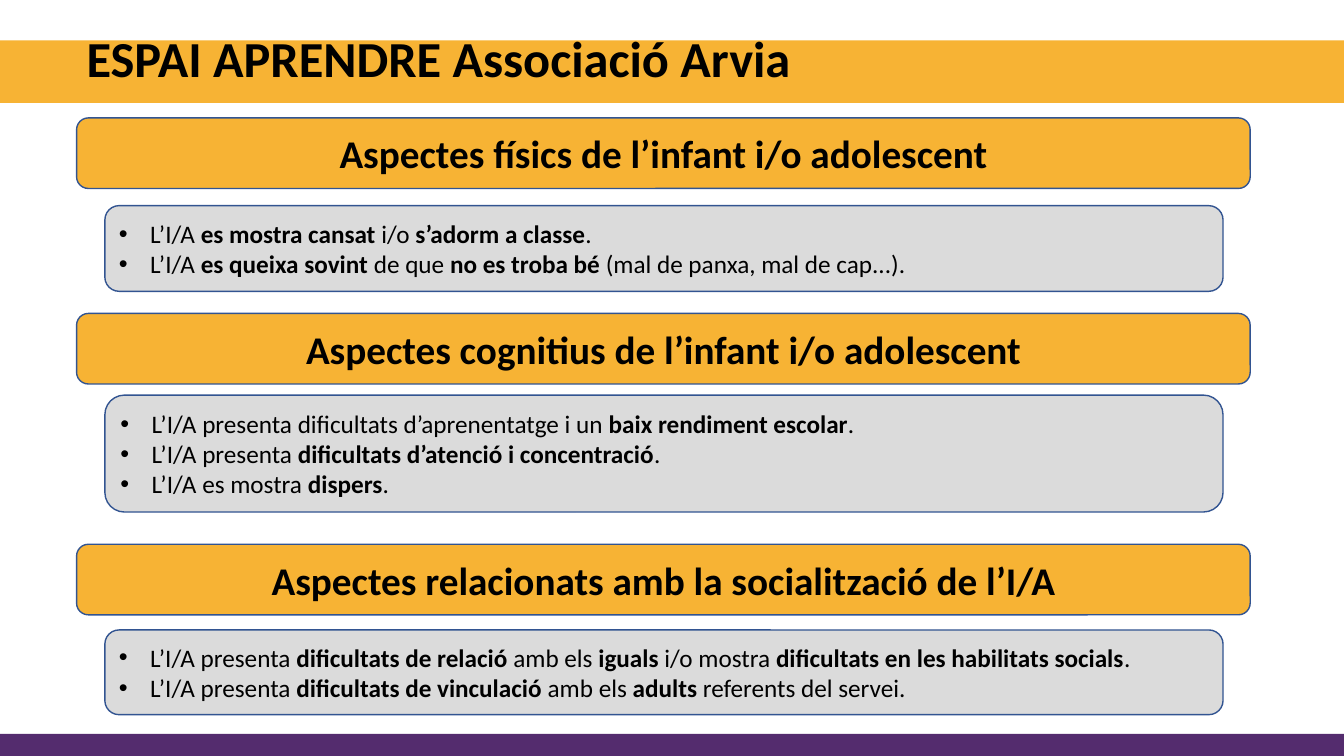
"""Build a slide on physical, cognitive and social signs in children and adolescents."""
from dataclasses import dataclass

import pptx
import pptx.dml.color
import pptx.enum.shapes
import pptx.enum.text
import pptx.util
from lxml import etree
from pptx.util import Inches


@dataclass(frozen=True)
class Theme:
    amber: str = "F7B334"
    purple: str = "542C6E"
    grey: str = "DBDBDB"
    outline: str = "325491"
    ink: str = "000000"
    font: str = "Calibri"
    title_size: int = 36
    heading_size: int = 28
    sign_size: int = 18


theme = Theme()
SHAPES = pptx.enum.shapes.MSO_SHAPE
ANCHORS = pptx.enum.text.MSO_ANCHOR
ALIGNS = pptx.enum.text.PP_ALIGN

presentation = pptx.Presentation()
presentation.slide_width = Inches(13.33)
presentation.slide_height = Inches(7.5)
slide = presentation.slides.add_slide(presentation.slide_layouts[6])


def add_panel(kind, left, top, width, height, fill, outline=None):
    panel = slide.shapes.add_shape(
        kind, Inches(left), Inches(top), Inches(width), Inches(height))
    panel.shadow.inherit = False
    panel.fill.solid()
    panel.fill.fore_color.rgb = pptx.dml.color.RGBColor.from_string(fill)
    if outline:
        panel.line.color.rgb = pptx.dml.color.RGBColor.from_string(outline)
        panel.line.width = pptx.util.Pt(1)
    else:
        panel.line.fill.background()
    panel.text_frame.word_wrap = True
    panel.text_frame.vertical_anchor = ANCHORS.MIDDLE
    return panel


def add_run(paragraph, words, size, bold):
    run = paragraph.add_run()
    run.text = words
    run.font.name = theme.font
    run.font.size = pptx.util.Pt(size)
    run.font.bold = bold
    run.font.color.rgb = pptx.dml.color.RGBColor.from_string(theme.ink)


add_panel(SHAPES.RECTANGLE, 0, 0.4, 13.33, 0.62, theme.amber)
add_panel(SHAPES.RECTANGLE, 0, 7.28, 13.33, 0.22, theme.purple)

title = slide.shapes.add_textbox(Inches(0.76), Inches(0.29), Inches(7.69), Inches(0.79))
title.text_frame.word_wrap = True
title.text_frame.vertical_anchor = ANCHORS.TOP
title.text_frame.paragraphs[0].line_spacing = 0.9
add_run(title.text_frame.paragraphs[0], "ESPAI APRENDRE Associació Arvia",
        theme.title_size, True)

# Asterisks enclose the bold words of each sign.
sections = [
    ("Aspectes físics de l’infant i/o adolescent", 1.17, 2.04, 0.85, [
        "L’I/A *es mostra cansat* i/o *s’adorm a classe*.",
        "L’I/A *es queixa sovint *de que *no es troba bé *(mal de panxa, mal de cap...).",
    ]),
    ("Aspectes cognitius de l’infant i/o adolescent", 3.11, 3.92, 1.16, [
        "L’I/A presenta dificultats d’aprenentatge i un *baix rendiment escolar*.",
        "L’I/A presenta *dificultats d’atenció i concentració*.",
        "L’I/A es mostra *dispers*.",
    ]),
    ("Aspectes relacionats amb la socialització de l’I/A", 5.4, 6.25, 0.84, [
        "L’I/A presenta *dificultats de relació *amb els *iguals *i/o mostra "
        "*dificultats en les habilitats socials*.",
        "L’I/A presenta *dificultats de vinculació *amb els *adults* referents del servei.",
    ]),
]

for heading, heading_top, signs_top, signs_height, signs in sections:
    banner = add_panel(SHAPES.ROUNDED_RECTANGLE, 0.76, heading_top, 11.64, 0.7,
                       theme.amber, theme.outline)
    banner.text_frame.paragraphs[0].alignment = ALIGNS.CENTER
    add_run(banner.text_frame.paragraphs[0], heading, theme.heading_size, True)

    details = add_panel(SHAPES.ROUNDED_RECTANGLE, 1.04, signs_top, 11.09, signs_height,
                        theme.grey, theme.outline)
    for index, sign in enumerate(signs):
        frame = details.text_frame
        paragraph = frame.add_paragraph() if index else frame.paragraphs[0]
        paragraph.alignment = ALIGNS.LEFT
        properties = paragraph._p.get_or_add_pPr()
        properties.set("marL", str(Inches(0.31)))
        properties.set("indent", str(-Inches(0.31)))
        etree.SubElement(properties, pptx.oxml.ns.qn("a:buFont"), typeface="Arial")
        etree.SubElement(properties, pptx.oxml.ns.qn("a:buChar"), char="•")
        for part, words in enumerate(sign.split("*")):
            add_run(paragraph, words, theme.sign_size, part % 2 == 1)

presentation.save("out.pptx")
